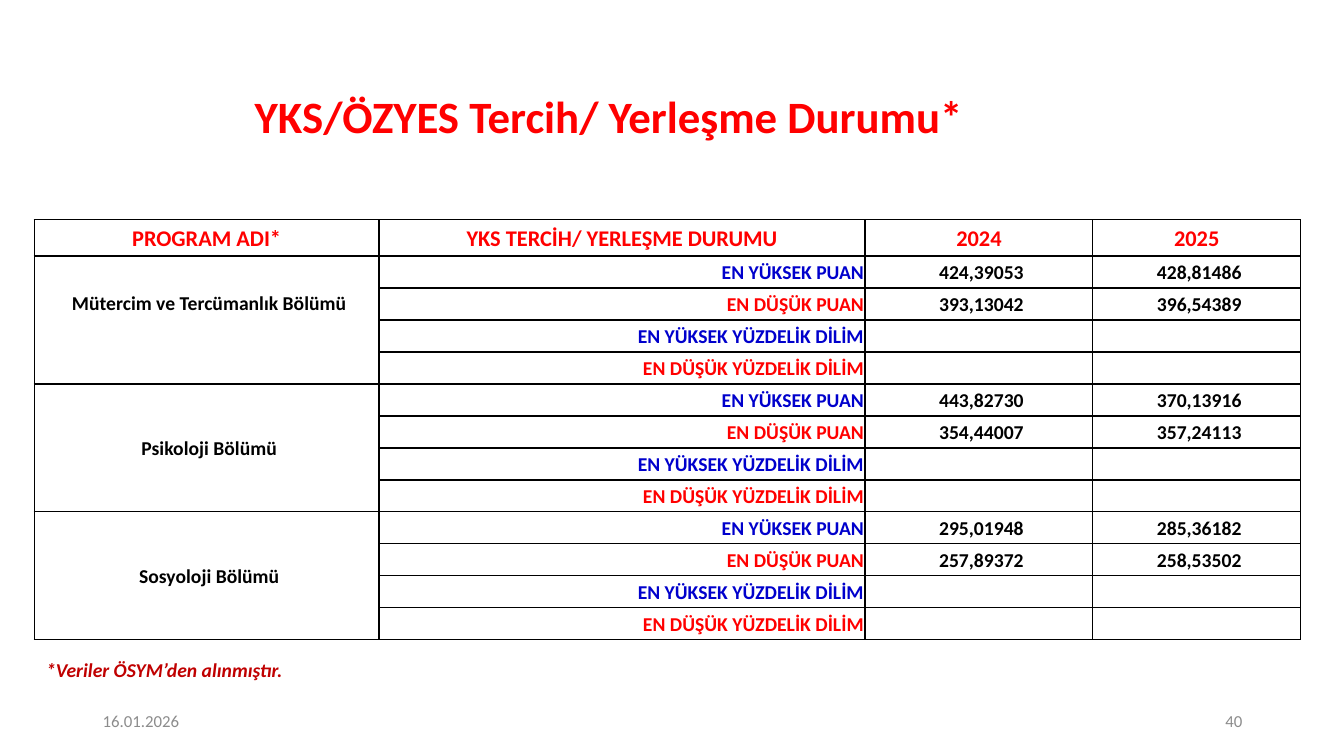
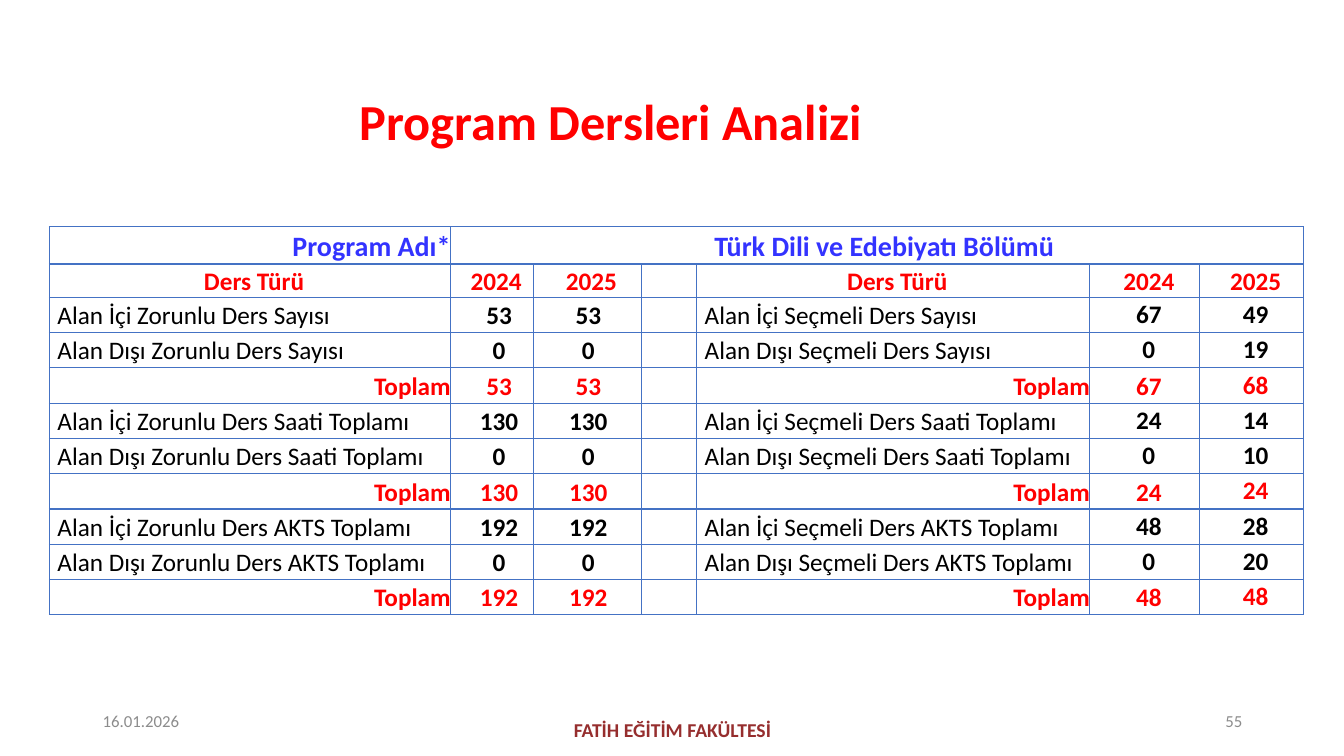
from lxml.etree import SubElement
from pptx import Presentation
from pptx.dml.color import RGBColor
from pptx.enum.text import MSO_ANCHOR, MSO_AUTO_SIZE, PP_ALIGN
from pptx.oxml.ns import qn
from pptx.util import Inches, Pt

RED, BLACK, BLUE, VIOLET = "FF0000", "000000", "0000CC", "3333FF"
GRAY, BROWN, DARK_RED, GRID_BLUE = "8C8C8C", "962E2E", "C00000", "4472C4"
LEFT, CENTER, RIGHT = PP_ALIGN.LEFT, PP_ALIGN.CENTER, PP_ALIGN.RIGHT
TOP, MIDDLE = MSO_ANCHOR.TOP, MSO_ANCHOR.MIDDLE
FONT = "Calibri"
DATE = "16.01.2026"
TITLE_ONLY = 5


def rgb(value):
    return RGBColor.from_string(value)


def set_attrs(obj, values):
    for name, value in values.items():
        setattr(obj, name, value)


def write(tf, text, size, color, align=LEFT, spacing=1.0, bold=True, italic=False):
    p = tf.paragraphs[0]
    set_attrs(p, {"alignment": align, "line_spacing": spacing})
    r = p.add_run()
    r.text = text
    set_attrs(r.font, {"name": FONT, "size": Pt(size), "bold": bold, "italic": italic})
    r.font.color.rgb = rgb(color)


def add_label(slide, box, text, size, color, anchor=MIDDLE, **style):
    sp = slide.shapes.add_textbox(*map(Inches, box))
    set_attrs(sp.text_frame, {"word_wrap": True, "vertical_anchor": anchor})
    write(sp.text_frame, text, size, color, **style)


def add_base(prs, title, box, size, number):
    slide = prs.slides.add_slide(prs.slide_layouts[TITLE_ONLY])
    sp = slide.shapes.title
    set_attrs(sp, dict(zip(("left", "top", "width", "height"), map(Inches, box))))
    set_attrs(sp.text_frame, {"word_wrap": True, "vertical_anchor": MIDDLE,
                              "auto_size": MSO_AUTO_SIZE.NONE})
    write(sp.text_frame, title, size, RED, CENTER, 0.9)
    add_label(slide, (0.92, 6.95, 3, 0.4), DATE, 12, GRAY, bold=False)
    add_label(slide, (9.42, 6.95, 3, 0.4), number, 12, GRAY, align=RIGHT, bold=False)
    return slide


def set_borders(cell, color):
    tcPr = cell._tc.get_or_add_tcPr()
    for side in ("lnL", "lnR", "lnT", "lnB"):
        ln = SubElement(tcPr, qn(f"a:{side}"), w=str(Pt(1)))
        fill = SubElement(ln, qn("a:solidFill"))
        SubElement(fill, qn("a:srgbClr"), val=color)


def add_grid(slide, left, top, widths, heights, border):
    frame = slide.shapes.add_table(len(heights), len(widths), Inches(left), Inches(top),
                                   Inches(sum(widths)), Inches(sum(heights)))
    table = frame.table
    set_attrs(table, {"first_row": False, "horz_banding": False})
    for column, width in zip(table.columns, widths):
        column.width = Inches(width)
    for row, height in zip(table.rows, heights):
        row.height = Inches(height)
    for cell in table.iter_cells():
        set_borders(cell, border)
        cell.fill.background()
        set_attrs(cell, dict.fromkeys(
            ("margin_left", "margin_right", "margin_top", "margin_bottom"), 0))
    return table


def fill_cell(cell, text, size, color, align=CENTER, left=0.0, right=0.0,
              anchor=MIDDLE, bold=True):
    set_attrs(cell, {"margin_left": Inches(left), "margin_right": Inches(right),
                     "vertical_anchor": anchor})
    write(cell.text_frame, text, size, color, align, 1.07, bold)


def add_score_table(slide, left, top):
    headers = ("PROGRAM ADI*", "YKS TERCİH/ YERLEŞME DURUMU", "2024", "2025")
    measures = (("EN YÜKSEK PUAN", BLUE), ("EN DÜŞÜK PUAN", RED),
                ("EN YÜKSEK YÜZDELİK DİLİM", BLUE), ("EN DÜŞÜK YÜZDELİK DİLİM", RED))
    programs = (
        ("Mütercim ve Tercümanlık Bölümü",
         (("424,39053", "428,81486"), ("393,13042", "396,54389"))),
        ("Psikoloji Bölümü",
         (("443,82730", "370,13916"), ("354,44007", "357,24113"))),
        ("Sosyoloji Bölümü",
         (("295,01948", "285,36182"), ("257,89372", "258,53502"))),
    )
    count = len(programs) * len(measures)
    heights = [0.36] + [(4.17 - 0.36) / count] * count
    table = add_grid(slide, left, top, (3.42, 4.82, 2.26, 2.06), heights, BLACK)
    for col, text in enumerate(headers):
        fill_cell(table.cell(0, col), text, 16, RED)
    for index, (program, scores) in enumerate(programs):
        first = 1 + index * len(measures)
        name = table.cell(first, 0)
        name.merge(table.cell(first + len(measures) - 1, 0))
        fill_cell(name, program, 14, BLACK, left=0.05)
        for row, (text, color) in enumerate(measures, first):
            fill_cell(table.cell(row, 1), text, 14, color, RIGHT, right=0.01)
        for row, pair in enumerate(scores, first):
            for col, score in enumerate(pair, 2):
                fill_cell(table.cell(row, col), score, 14, BLACK, left=0.05)
    table.cell(1, 0).margin_bottom = Inches(0.34)


def add_course_table(slide, left, top):
    indent, nudge = 0.08, 0.06
    groups = (
        ("Ders Sayısı", ((53, 53, 67, 49), (0, 0, 0, 19), (53, 53, 67, 68))),
        ("Ders Saati Toplamı", ((130, 130, 24, 14), (0, 0, 0, 10), (130, 130, 24, 24))),
        ("Ders AKTS Toplamı", ((192, 192, 48, 28), (0, 0, 0, 20), (192, 192, 48, 48))),
    )
    kinds = ((0, "Zorunlu"), (4, "Seçmeli"))
    table = add_grid(slide, left, top, (3.98, 0.82, 1.07, 0.55, 3.9, 1.09, 1.03),
                     [0.37, 0.33] + [0.35] * 9, GRID_BLUE)
    fill_cell(table.cell(0, 0), "Program Adı*", 20, VIOLET, RIGHT, indent)
    table.cell(0, 1).merge(table.cell(0, 6))
    fill_cell(table.cell(0, 1), "Türk Dili ve Edebiyatı Bölümü", 20, VIOLET,
              left=indent + nudge)
    for start, _ in kinds:
        for col, text in enumerate(("Ders Türü", "2024", "2025"), start):
            fill_cell(table.cell(1, col), text, 18, RED, left=indent)
    row = 2
    for measure, lines in groups:
        for scope, values in zip(("Alan İçi", "Alan Dışı", None), lines):
            total = scope is None
            color = RED if total else BLACK
            for col, kind in kinds:
                text = "Toplam" if total else f"{scope} {kind} {measure}"
                fill_cell(table.cell(row, col), text, 18, color,
                          RIGHT if total else LEFT, indent, bold=total)
            for col, value in zip((1, 2, 5, 6), values):
                on_top = col == 6 or (col == 5 and not total)
                fill_cell(table.cell(row, col), str(value), 18, color,
                          left=indent + (nudge if col == 1 else 0),
                          right=nudge if col == 2 else 0,
                          anchor=TOP if on_top else MIDDLE)
            row += 1


def build_scores(prs):
    slide = add_base(prs, "YKS/ÖZYES Tercih/ Yerleşme Durumu*",
                     (0.34, 0.82, 11.4, 0.73), 32, "40")
    add_score_table(slide, 0.34, 2.18)
    add_label(slide, (0.36, 6.48, 6.93, 0.34), "*Veriler ÖSYM’den alınmıştır.",
              14, DARK_RED, anchor=TOP, italic=True)


def build_courses(prs):
    slide = add_base(prs, "Program Dersleri Analizi",
                     (0.41, 0.82, 11.3, 0.83), 36, "55")
    add_label(slide, (4.42, 7.04, 4.5, 0.4), "FATİH EĞİTİM FAKÜLTESİ",
              14, BROWN, align=CENTER)
    add_course_table(slide, 0.49, 2.25)


def main():
    prs = Presentation()
    set_attrs(prs, {"slide_width": Inches(13.33), "slide_height": Inches(7.5)})
    build_scores(prs)
    build_courses(prs)
    prs.save("out.pptx")


if __name__ == "__main__":
    main()
